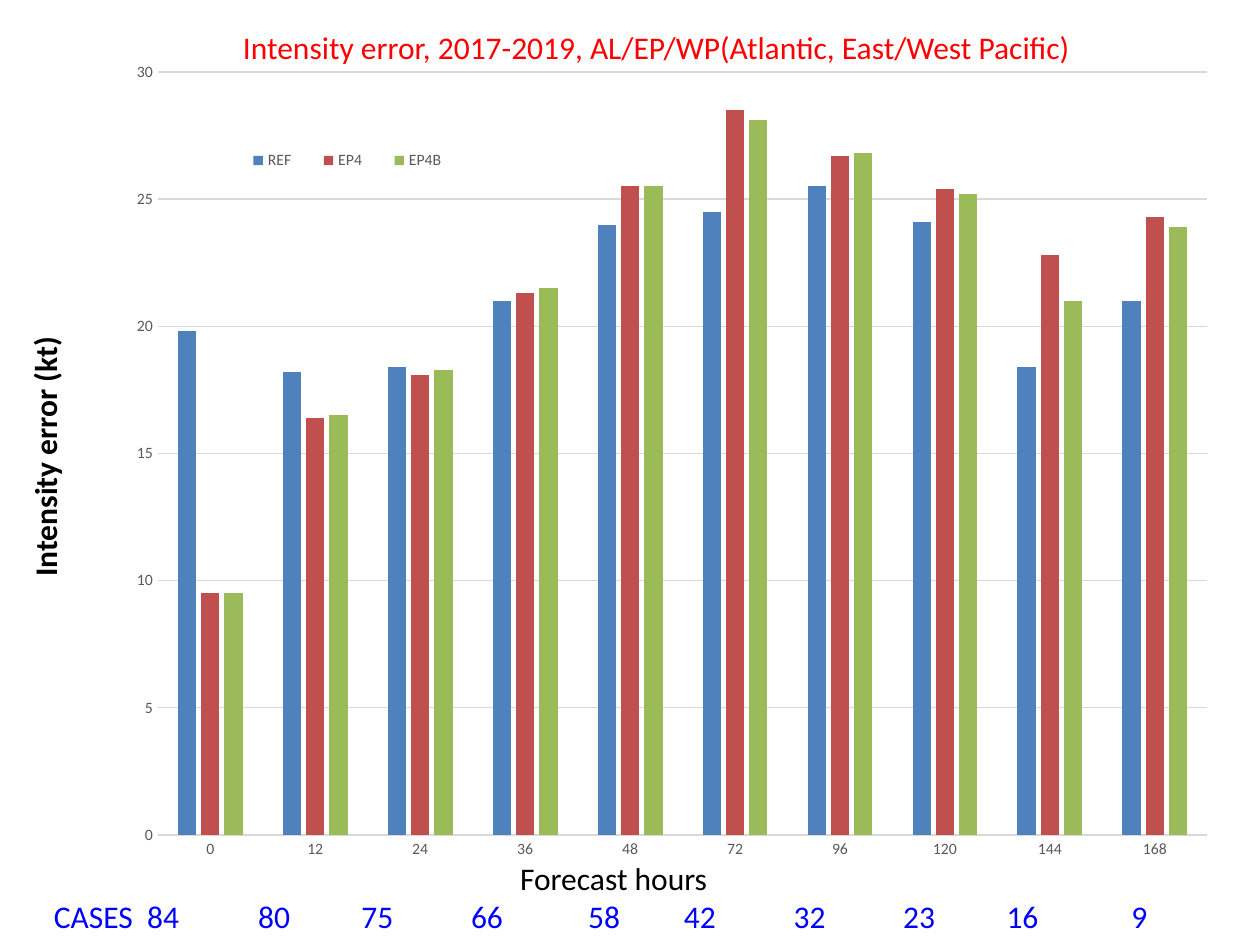
import pptx
import pptx.chart.data
import pptx.dml.color
import pptx.enum.chart
import pptx.enum.text
import pptx.oxml
import pptx.oxml.ns
import pptx.util
from pptx.util import Inches, Pt

COLORS = {
    "title": "FF0000", "text": "000000", "cases": "0000FF",
    "axis": "595959", "grid": "D9D9D9",
    "REF": "4F81BD", "EP4": "C0504D", "EP4B": "9BBB59",
}
FONT = "Calibri"
TITLE = "Intensity error, 2017-2019, AL/EP/WP(Atlantic, East/West Pacific)"
Y_LABEL = "Intensity error (kt)"
X_LABEL = "Forecast hours"
HOURS = ["0", "12", "24", "36", "48", "72", "96", "120", "144", "168"]
SERIES = {
    "REF": [19.8, 18.2, 18.4, 21, 24, 24.5, 25.5, 24.1, 18.4, 21],
    "EP4": [9.5, 16.4, 18.1, 21.3, 25.5, 28.5, 26.7, 25.4, 22.8, 24.3],
    "EP4B": [9.5, 16.5, 18.3, 21.5, 25.5, 28.1, 26.8, 25.2, 21, 23.9],
}
CASES = [(84, 0.74), (80, 1.62), (75, 2.44), (66, 3.31), (58, 4.24),
         (42, 5), (32, 5.87), (23, 6.74), (16, 7.56), (9, 8.55)]


def rgb(name):
    return pptx.dml.color.RGBColor.from_string(COLORS[name])


def set_font(font, size, color, bold=False):
    font.name, font.size, font.bold = FONT, Pt(size), bold
    font.color.rgb = rgb(color)


def add_text(slide, box, lines, wrap=True):
    tb = slide.shapes.add_textbox(*map(Inches, box))
    tf = tb.text_frame
    tf.word_wrap = wrap
    tf.text = "\n".join(text for text, color in lines)
    for p, (text, color) in zip(tf.paragraphs, lines):
        set_font(p.font, 18, color)
    return tb


def add_tabs(p, stops):
    tabs = pptx.oxml.parse_xml(f"<a:tabLst {pptx.oxml.ns.nsdecls('a')}/>")
    for stop in stops:
        tabs.append(pptx.oxml.parse_xml(
            f'<a:tab {pptx.oxml.ns.nsdecls("a")} pos="{Inches(stop)}" algn="l"/>'))
    pPr = p._p.get_or_add_pPr()
    pPr.insert_element_before(tabs, "a:defRPr", "a:extLst")


def set_layout(parent, index, frame, inner=False):
    for old in parent.findall(pptx.oxml.ns.qn("c:layout")):
        parent.remove(old)
    target = '<c:layoutTarget val="inner"/>' if inner else ""
    modes = "".join(f'<c:{k}Mode val="edge"/>' for k in "xy")
    sizes = "".join(f'<c:{k} val="{v}"/>' for k, v in zip("xywh", frame))
    parent.insert(index, pptx.oxml.parse_xml(
        f'<c:layout {pptx.oxml.ns.nsdecls("c")}><c:manualLayout>'
        f"{target}{modes}{sizes}</c:manualLayout></c:layout>"))


def add_error_chart(slide):
    data = pptx.chart.data.CategoryChartData()
    data.categories = HOURS
    for name, values in SERIES.items():
        data.add_series(name, values)
    chart = slide.shapes.add_chart(
        pptx.enum.chart.XL_CHART_TYPE.COLUMN_CLUSTERED,
        Inches(0.92), Inches(0.42), Inches(8.75), Inches(6.57), data).chart
    chart.has_title = False
    set_font(chart.font, 10, "text")

    plot = chart.plots[0]
    plot.gap_width, plot.overlap, plot.vary_by_categories = 219, -27, False
    for s in plot.series:
        s.format.fill.solid()
        s.format.fill.fore_color.rgb = rgb(s.name)

    cat, val = chart.category_axis, chart.value_axis
    for axis in (cat, val):
        axis.major_tick_mark = pptx.enum.chart.XL_TICK_MARK.NONE
        axis.minor_tick_mark = pptx.enum.chart.XL_TICK_MARK.NONE
        set_font(axis.tick_labels.font, 9, "axis")
    val.minimum_scale, val.maximum_scale, val.major_unit = 0, 30, 5
    val.format.line.fill.background()
    val.has_major_gridlines = True
    for line in (cat.format.line, val.major_gridlines.format.line):
        line.color.rgb = rgb("grid")
        line.width = Pt(0.75)

    chart.has_legend = True
    legend = chart.legend
    legend.position = pptx.enum.chart.XL_LEGEND_POSITION.BOTTOM
    legend.include_in_layout = False
    set_font(legend.font, 9, "axis")
    set_layout(chart.element.xpath(".//c:legend")[0], 1, (0.1, 0.11, 0.22, 0.04))
    set_layout(chart.element.xpath(".//c:plotArea")[0], 0,
               (0.038, 0.023, 0.952, 0.922), inner=True)


def main():
    prs = pptx.Presentation()
    prs.slide_width, prs.slide_height = Inches(10), Inches(7.5)
    slide = prs.slides.add_slide(prs.slide_layouts[6])

    add_text(slide, (1.83, 0.17, 7.08, 0.4), [(TITLE, "title")])

    y_label = add_text(slide, (-0.7, 3.41, 2.12, 0.41), [(Y_LABEL, "text")], wrap=False)
    y_label.rotation = 270
    y_label.text_frame.paragraphs[0].font.bold = True

    cases = "\t".join(["CASES"] + [str(count) for count, stop in CASES])
    footer = add_text(slide, (0.33, 6.77, 9.08, 0.71),
                      [(X_LABEL, "text"), (cases, "cases")])
    hours_p, cases_p = footer.text_frame.paragraphs
    hours_p.alignment = pptx.enum.text.PP_ALIGN.CENTER
    add_tabs(cases_p, [stop for count, stop in CASES])

    add_error_chart(slide)
    prs.save("out.pptx")


if __name__ == "__main__":
    main()
